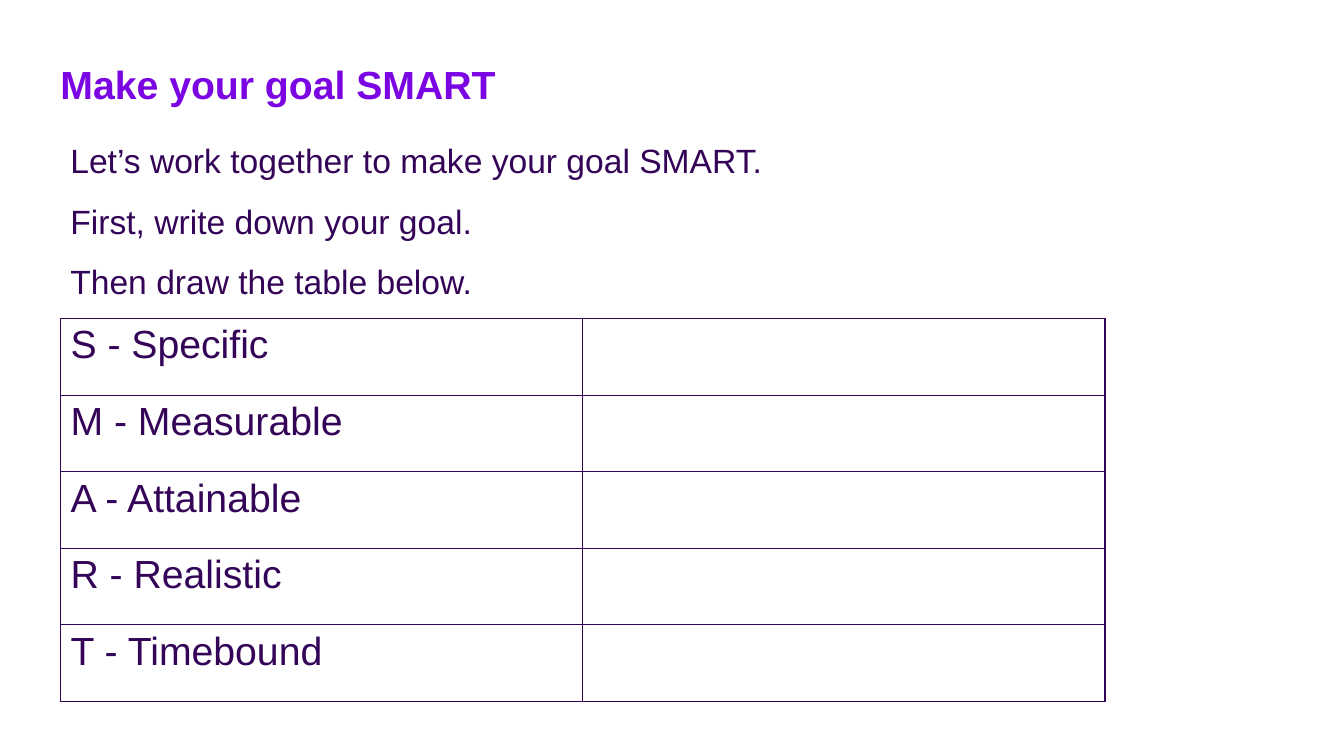
from lxml.etree import SubElement
from pptx import Presentation
from pptx.dml.color import RGBColor as Rgb
from pptx.enum.text import MSO_ANCHOR as Anchor
from pptx.oxml.ns import qn
from pptx.util import Inches, Pt

COLORS = {"heading": "7B05E2", "ink": "340458"}


class GoalSlide:
    font = "Arial"

    def __init__(self, deck):
        self.slide = deck.slides.add_slide(deck.slide_layouts[6])

    def add_run(self, paragraph, text, size, color, bold=False):
        run = paragraph.add_run()
        run.text = text
        run.font.name = self.font
        run.font.size = Pt(size)
        run.font.bold = bold
        run.font.color.rgb = Rgb.from_string(COLORS[color])

    def add_text(self, box, lines, size, color, spacing, bold=False, left_inset=0.1):
        frame = self.slide.shapes.add_textbox(*map(Inches, box)).text_frame
        frame.word_wrap = True
        frame.vertical_anchor = Anchor.TOP
        frame.margin_left = Inches(left_inset)
        for index, line in enumerate(lines):
            paragraph = frame.add_paragraph() if index else frame.paragraphs[0]
            paragraph.line_spacing = spacing
            self.add_run(paragraph, line, size, color, bold)

    def add_border(self, cell, width):
        properties = cell._tc.get_or_add_tcPr()
        for side in ("a:lnL", "a:lnR", "a:lnT", "a:lnB"):
            line = SubElement(properties, qn(side), w=str(Pt(width)))
            fill = SubElement(line, qn("a:solidFill"))
            SubElement(fill, qn("a:srgbClr"), val=COLORS["ink"])

    def add_label_table(self, box, labels, size):
        table = self.slide.shapes.add_table(len(labels), 2, *map(Inches, box)).table
        table.first_row = table.horz_banding = False
        for row, label in zip(table.rows, labels):
            for cell in row.cells:
                self.add_border(cell, 1)
                cell.fill.background()
            self.add_run(row.cells[0].text_frame.paragraphs[0], label, size, "ink")


def main():
    deck = Presentation()
    deck.slide_width, deck.slide_height = Inches(13.33), Inches(7.5)
    goal = GoalSlide(deck)

    # Heading
    goal.add_text((0.6, 0.6, 11.5, 0.36), ["Make your goal SMART"],
                  28, "heading", 0.9, bold=True, left_inset=0)

    # Table to fill in
    criteria = ["Specific", "Measurable", "Attainable", "Realistic", "Timebound"]
    labels = [f"{word[0]} - {word}" for word in criteria]
    goal.add_label_table((0.6, 3.16, 10.36, 3.8), labels, 28)

    # Instructions
    instructions = [
        "Let’s work together to make your goal SMART.",
        "First, write down your goal.",
        "Then draw the table below.",
    ]
    goal.add_text((0.6, 1.14, 8.86, 1.84), instructions, 24, "ink", 1.5)

    deck.save("out.pptx")


if __name__ == "__main__":
    main()
